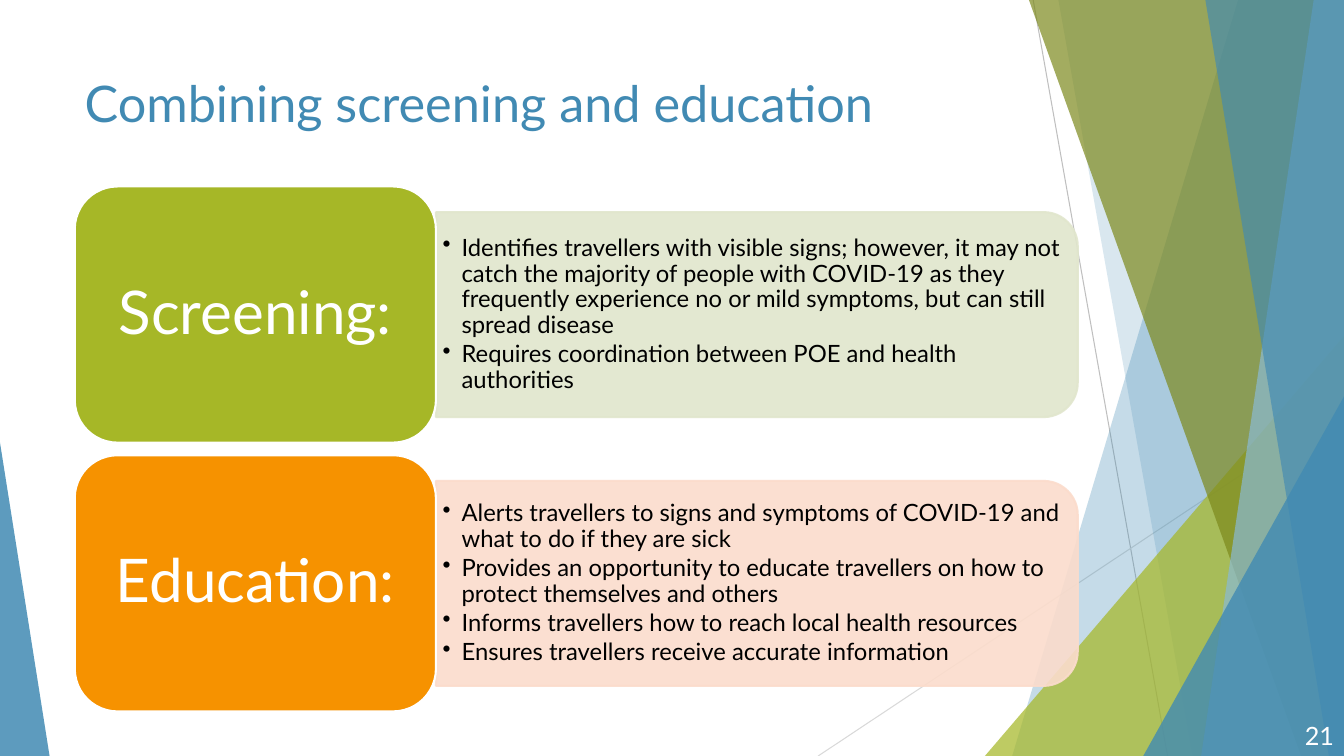
from dataclasses import dataclass
from typing import Optional

from lxml.etree import SubElement
from pptx import Presentation
from pptx.dml.color import RGBColor
from pptx.enum.shapes import MSO_CONNECTOR as Connector, MSO_SHAPE as Preset
from pptx.enum.text import MSO_ANCHOR as Anchor, PP_ALIGN as Align
from pptx.oxml.ns import qn
from pptx.util import Emu, Pt

# The slide is a grid of square cells, twelve to the inch
COLUMNS, ROWS, CELL = 160, 90, 76200


@dataclass(frozen=True)
class Theme:
    font: str = "Lato"
    blue: str = "418AB3"
    light_blue: str = "8ABAD4"
    green: str = "A6B727"
    olive: str = "7D891D"
    orange: str = "F69200"
    pale_green: str = "E1E6CD"
    pale_orange: str = "FBDCCC"
    white: str = "FFFFFF"
    black: str = "000000"
    gray: str = "BFBFBF"
    light_gray: str = "D9D9D9"
    title_size: int = 36
    label_size: int = 43
    body_size: int = 17
    number_size: int = 18


THEME = Theme()


@dataclass(frozen=True)
class Box:
    column: float
    row: float
    width: float
    height: float

    def emu(self) -> tuple:
        return tuple(cells(n) for n in (self.column, self.row, self.width, self.height))


@dataclass(frozen=True)
class Ray:
    start: tuple
    end: tuple
    color: str


@dataclass(frozen=True)
class Facet:
    """A translucent piece of the backdrop: a triangle, or a band to the right edge."""
    color: str
    opacity: int
    top: float = 0
    bottom: float = 0
    triangle: Optional[Box] = None
    apex: float = 1


@dataclass(frozen=True)
class Topic:
    label: str
    color: str
    panel_color: str
    points: tuple


RAYS = (
    Ray((123, 0), (139, 90), THEME.gray),
    Ray((160, 48.4), (97.4, 90), THEME.light_gray),
)
FACETS = (
    Facet(THEME.blue, 30, 147.4, 120.5),
    Facet(THEME.blue, 20, 126, 142),
    Facet(THEME.green, 72, triangle=Box(117.25, 40, 42.75, 50)),
    Facet(THEME.olive, 70, 122.5, 154.9),
    Facet(THEME.light_blue, 70, 156.4, 143),
    Facet(THEME.blue, 65, 143.5, 158.2),
    Facet(THEME.blue, 80, triangle=Box(136.1, 47.2, 23.9, 42.8)),
    Facet(THEME.blue, 85, triangle=Box(0, 52.7, 5.9, 37.3), apex=0),
)
TOPICS = (
    Topic("Screening:", THEME.green, THEME.pale_green, (
        "Identifies travellers with visible signs; however, it may not catch the majority "
        "of people with COVID-19 as they frequently experience no or mild symptoms, "
        "but can still spread disease",
        "Requires coordination between POE and health authorities",
    )),
    Topic("Education:", THEME.orange, THEME.pale_orange, (
        "Alerts travellers to signs and symptoms of COVID-19 and what to do if they are sick",
        "Provides an opportunity to educate travellers on how to protect themselves and others",
        "Informs travellers how to reach local health resources",
        "Ensures travellers receive accurate information",
    )),
)
LABEL = Box(8.9, 22.2, 43, 30.5)
PANEL_WIDTH, PANEL_HEIGHT = 76.4, 24.4
POINTS_WIDTH, POINTS_HEIGHT = 75.2, 22
TOPIC_STEP = 32


def cells(count: float) -> Emu:
    return Emu(round(count * CELL))


def paint(fill, color: str, opacity: int = 100) -> None:
    fill.solid()
    fill.fore_color.rgb = RGBColor.from_string(color)
    if opacity < 100:
        color_element = fill._xPr.find(f"{qn('a:solidFill')}/{qn('a:srgbClr')}")
        SubElement(color_element, qn("a:alpha"), val=str(opacity * 1000))


def outline(shape, color: str, opacity: int = 100) -> None:
    shape.line.width = Pt(1.5)
    paint(shape.line.fill, color, opacity)


def write(shape, lines: tuple, size: int, color: str, align: Align = Align.LEFT,
          anchor: Anchor = Anchor.MIDDLE, spacing: float = 1, after: float = 0,
          inset: tuple = (1.2, 0.6), bullet: bool = False) -> None:
    frame = shape.text_frame
    frame.word_wrap = True
    frame.vertical_anchor = anchor
    frame.margin_left = frame.margin_right = cells(inset[0])
    frame.margin_top = frame.margin_bottom = cells(inset[1])
    frame.text = "\n".join(lines)
    for paragraph in frame.paragraphs:
        paragraph.alignment = align
        paragraph.line_spacing = spacing
        paragraph.space_after = Pt(after)
        for run in paragraph.runs:
            run.font.name = THEME.font
            run.font.size = Pt(size)
            run.font.color.rgb = RGBColor.from_string(color)
        if bullet:
            properties = paragraph._p.get_or_add_pPr()
            indent = cells(2.25)
            properties.set("marL", str(indent))
            properties.set("indent", str(-indent))
            SubElement(properties, qn("a:buChar"), char="•")


def draw_ray(slide, ray: Ray) -> None:
    ends = [cells(n) for n in ray.start + ray.end]
    line = slide.shapes.add_connector(Connector.STRAIGHT, *ends)
    line.line.width = Pt(0.75)
    line.line.color.rgb = RGBColor.from_string(ray.color)
    SubElement(line._element.spPr, qn("a:effectLst"))


def draw_facet(slide, facet: Facet) -> None:
    if facet.triangle:
        shape = slide.shapes.add_shape(Preset.ISOSCELES_TRIANGLE, *facet.triangle.emu())
        shape.adjustments[0] = facet.apex
    else:
        corners = ((COLUMNS, 0), (COLUMNS, ROWS), (facet.bottom, ROWS))
        builder = slide.shapes.build_freeform(cells(facet.top), 0)
        builder.add_line_segments([(cells(x), cells(y)) for x, y in corners], close=True)
        shape = builder.convert_to_shape()
    shape.shadow.inherit = False
    shape.line.fill.background()
    paint(shape.fill, facet.color, facet.opacity)


def draw_topic(slide, topic: Topic, index: int) -> None:
    top = LABEL.row + index * TOPIC_STEP
    left = LABEL.column + LABEL.width
    middle = top + LABEL.height / 2

    # Panel: an upright shape turned a quarter so its round corners face right
    upright = Box(left + (PANEL_WIDTH - PANEL_HEIGHT) / 2, middle - PANEL_WIDTH / 2,
                  PANEL_HEIGHT, PANEL_WIDTH)
    panel = slide.shapes.add_shape(Preset.ROUND_2_SAME_RECTANGLE, *upright.emu())
    panel.rotation = 90
    panel.shadow.inherit = False
    paint(panel.fill, topic.panel_color, 90)
    outline(panel, topic.panel_color, 90)

    # Bulleted points
    area = Box(left, middle - POINTS_HEIGHT / 2, POINTS_WIDTH, POINTS_HEIGHT)
    points = slide.shapes.add_textbox(*area.emu())
    write(points, topic.points, THEME.body_size, THEME.black, spacing=0.9, after=2.5,
          inset=(0.8, 0.5), bullet=True)

    # Label
    box = Box(LABEL.column, top, LABEL.width, LABEL.height)
    label = slide.shapes.add_shape(Preset.ROUNDED_RECTANGLE, *box.emu())
    label.shadow.inherit = False
    paint(label.fill, topic.color)
    outline(label, THEME.white)
    write(label, (topic.label,), THEME.label_size, THEME.white, Align.CENTER,
          spacing=0.9, after=15, inset=(2.2, 1.1))


def main() -> None:
    presentation = Presentation()
    presentation.slide_width = cells(COLUMNS)
    presentation.slide_height = cells(ROWS)
    slide = presentation.slides.add_slide(presentation.slide_layouts[6])

    # Backdrop
    for ray in RAYS:
        draw_ray(slide, ray)
    for facet in FACETS:
        draw_facet(slide, facet)

    # Title, topics and slide number
    title = slide.shapes.add_textbox(*Box(8.9, 8, 112.8, 17.3).emu())
    write(title, ("Combining screening and education",), THEME.title_size, THEME.blue,
          anchor=Anchor.TOP)
    for index, topic in enumerate(TOPICS):
        draw_topic(slide, topic, index)
    number = slide.shapes.add_textbox(*Box(151, 85.2, 9, 4.8).emu())
    write(number, ("21",), THEME.number_size, THEME.white, Align.RIGHT)

    presentation.save("out.pptx")


if __name__ == "__main__":
    main()
